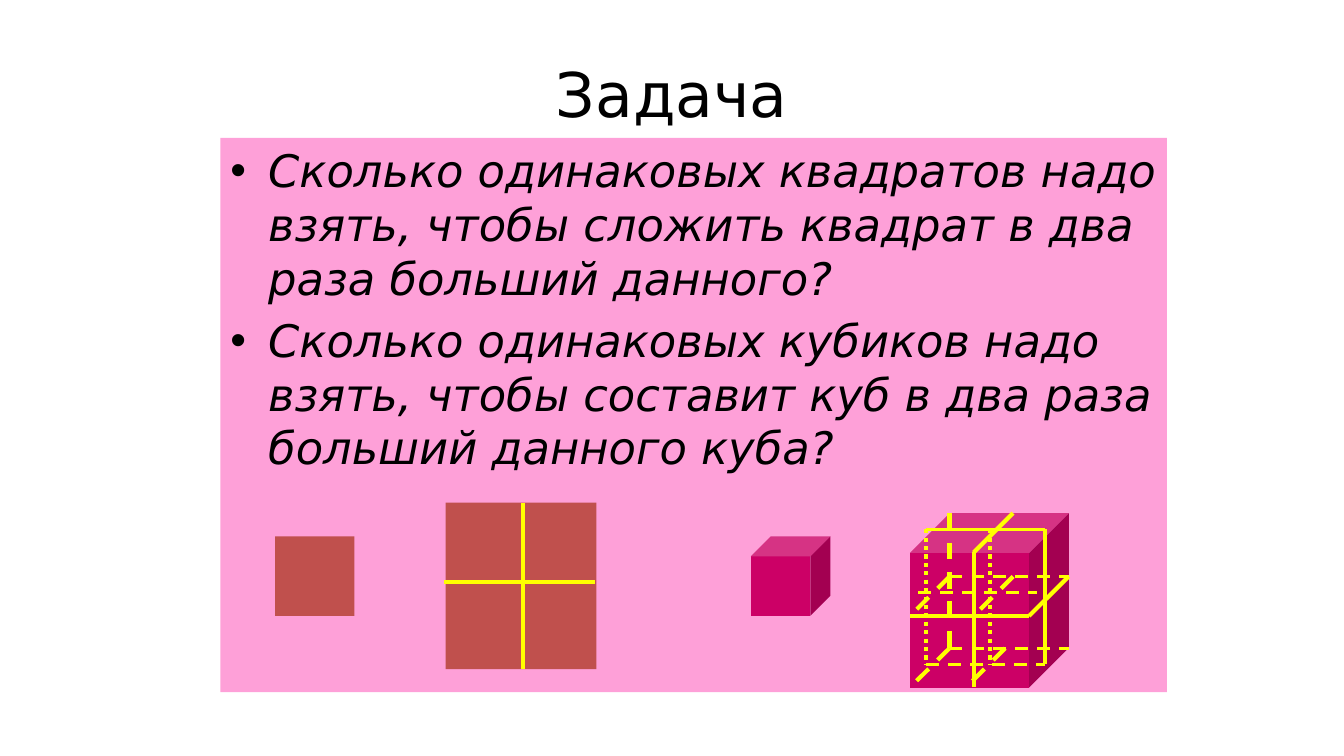
from dataclasses import dataclass

from lxml import etree
from pptx import Presentation
from pptx.dml.color import RGBColor
from pptx.enum.dml import MSO_LINE
from pptx.enum.shapes import MSO_CONNECTOR, MSO_SHAPE
from pptx.enum.text import MSO_ANCHOR, PP_ALIGN
from pptx.oxml.ns import qn
from pptx.util import Pt

RECTANGLE, CUBE = MSO_SHAPE.RECTANGLE, MSO_SHAPE.CUBE
STRAIGHT = MSO_CONNECTOR.STRAIGHT
SOLID, DASH, DOT = MSO_LINE.SOLID, MSO_LINE.DASH, MSO_LINE.ROUND_DOT
MIDDLE, TOP = MSO_ANCHOR.MIDDLE, MSO_ANCHOR.TOP
CENTER, LEFT = PP_ALIGN.CENTER, PP_ALIGN.LEFT


@dataclass(frozen=True)
class Theme:
    font: str = "DejaVu Sans"
    title_size: int = 44
    body_size: int = 32
    text: RGBColor = RGBColor(0x00, 0x00, 0x00)
    panel: RGBColor = RGBColor(0xFE, 0xA0, 0xD8)
    square: RGBColor = RGBColor(0xC0, 0x50, 0x4D)
    cube: RGBColor = RGBColor(0xCC, 0x00, 0x66)
    cut: RGBColor = RGBColor(0xFF, 0xFF, 0x00)


theme = Theme()


def add_solid(kind, left, top, width, height, color):
    shape = slide.shapes.add_shape(kind, Pt(left), Pt(top), Pt(width), Pt(height))
    shape.shadow.inherit = False
    shape.fill.solid()
    shape.fill.fore_color.rgb = color
    shape.line.fill.background()
    return shape


def add_cut(group, start_x, start_y, end_x, end_y, weight, dash):
    line = group.shapes.add_connector(
        STRAIGHT, Pt(start_x), Pt(start_y), Pt(end_x), Pt(end_y))
    line.line.color.rgb = theme.cut
    line.line.width = Pt(weight)
    line.line.dash_style = dash
    etree.SubElement(line._element.spPr, qn("a:effectLst"))


presentation = Presentation()
presentation.slide_width, presentation.slide_height = Pt(960), Pt(540)
slide = presentation.slides.add_slide(presentation.slide_layouts[6])

# Title
title = slide.shapes.add_textbox(Pt(48), Pt(21.6), Pt(864), Pt(90))
title.text_frame.word_wrap = True
title.text_frame.vertical_anchor = MIDDLE
paragraph = title.text_frame.paragraphs[0]
paragraph.text = "Задача"
paragraph.alignment = CENTER
paragraph.font.name = theme.font
paragraph.font.size = Pt(theme.title_size)
paragraph.font.color.rgb = theme.text

# Panel with the two questions
questions = [
    "Сколько одинаковых квадратов надо взять, чтобы сложить квадрат в два раза больший данного?",
    "Сколько одинаковых кубиков надо взять, чтобы составит куб в два раза больший данного куба?",
]
panel = add_solid(RECTANGLE, 157.5, 98.5, 676, 396, theme.panel)
frame = panel.text_frame
frame.word_wrap = True
frame.vertical_anchor = TOP
frame.margin_right = Pt(4)
for index, question in enumerate(questions):
    paragraph = frame.add_paragraph() if index else frame.paragraphs[0]
    paragraph.text = question
    paragraph.alignment = LEFT
    paragraph.space_before = Pt(6)
    paragraph.font.name = theme.font
    paragraph.font.size = Pt(theme.body_size)
    paragraph.font.italic = True
    paragraph.font.color.rgb = theme.text
    properties = paragraph._p.get_or_add_pPr()
    properties.set("marL", str(Pt(27)))
    properties.set("indent", str(Pt(-27)))
    etree.SubElement(properties, qn("a:buFont")).set("typeface", "Arial")
    etree.SubElement(properties, qn("a:buChar")).set("char", "•")

# Small and large figures
add_solid(RECTANGLE, 196.5, 383.2, 56.7, 56.7, theme.square)
add_solid(RECTANGLE, 318.3, 359, 107.7, 119, theme.square)
for left, top, width, height in [(536.4, 383.2, 56.7, 56.7), (650, 366.5, 113.4, 124.7)]:
    cube = add_solid(CUBE, left, top, width, height, theme.cube)
    cube.adjustments[0] = 0.25

# Cuts of the large square
square_cuts = slide.shapes.add_group_shape()
add_cut(square_cuts, 373.7, 359, 373.7, 478, 3, SOLID)
add_cut(square_cuts, 316.8, 415.5, 424.8, 415.5, 3, SOLID)

# Cuts of the large cube: levels of its front, middle and rear planes
front_left, front_center, front_right = 650, 695.5, 735
middle_left, middle_center, middle_right = 661.7, 707, 746.6
rear_left, rear_center, rear_right = 678.3, 723.6, 763.3
front_top, front_half, front_bottom = 394.6, 440, 491
middle_top, middle_half, middle_bottom = 378, 423.4, 474.5
rear_top, rear_half, rear_bottom = 366.5, 411.8, 463

cube_cuts = slide.shapes.add_group_shape()
cuts_by_style = {
    (2.25, DASH): [
        (656, middle_half, 741, middle_half),
        (middle_left, middle_bottom, middle_right, middle_bottom),
        (rear_left, rear_bottom, rear_right, rear_bottom),
        (rear_left, rear_half, rear_right, rear_half),
    ],
    (3, DOT): [
        (middle_left, middle_top, middle_left, middle_bottom),
        (middle_center, middle_top, middle_center, middle_bottom),
    ],
    (2.25, SOLID): [
        (middle_left, middle_top, middle_right, middle_top),
        (front_left, front_half, front_right, front_half),
    ],
    (3, DASH): [
        (rear_left, rear_bottom, front_left, front_bottom),
        (718, rear_bottom, 690, front_bottom),
        (rear_left, rear_half, front_left, front_half),
        (rear_left, rear_top, rear_left, rear_bottom),
        (rear_center, rear_half, front_center, front_half),
    ],
    (3, SOLID): [
        (middle_right, middle_top, middle_right, middle_bottom),
        (front_center, front_top, front_center, front_bottom),
        (front_right, front_half, rear_right, rear_half),
        (rear_center, rear_top, front_center, front_top),
    ],
}
for (weight, dash), cuts in cuts_by_style.items():
    for cut in cuts:
        add_cut(cube_cuts, *cut, weight, dash)

presentation.save("out.pptx")
